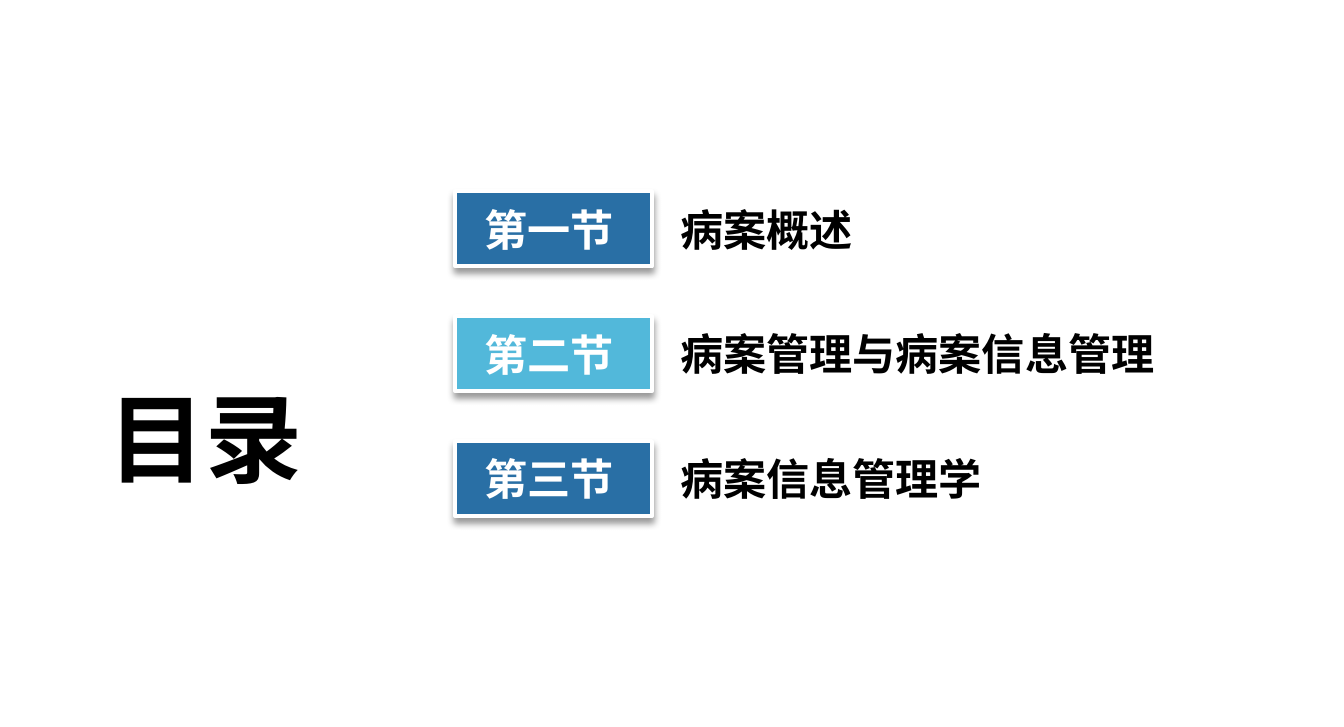
import lxml.etree
import pptx
import pptx.dml.color
import pptx.enum.shapes
import pptx.enum.text
import pptx.oxml.ns
import pptx.util

PX = 914400 // 200  # 200 px to the inch
FONT = "Noto Sans CJK SC"
COLORS = {
    "blue": "296FA5",
    "sky": "52B8DA",
    "white": "FFFFFF",
    "black": "000000",
}
SECTIONS = [
    ("第一节 ", "病案概述", "blue", 660),
    ("第二节 ", "病案管理与病案信息管理", "sky", 848),
    ("第三节 ", "病案信息管理学", "blue", 660),
]
FIRST_TOP, ROW_STEP = 296, 193


def rgb(name):
    return pptx.dml.color.RGBColor.from_string(COLORS[name])


def box(*lengths):
    return [pptx.util.Emu(n * PX) for n in lengths]


def sub(parent, tag, **attrs):
    return lxml.etree.SubElement(parent, pptx.oxml.ns.qn(tag), **attrs)


def set_text(tf, text, size, color):
    p = tf.paragraphs[0]
    p.text = text
    p.font.name = FONT
    p.font.size = pptx.util.Pt(size)
    p.font.bold = True
    p.font.color.rgb = rgb(color)
    # East Asian typeface
    sub(p.font._element, "a:ea", typeface=FONT)
    return p


def add_label(s, x, y, w, h, text, size, wrap=True):
    tf = s.shapes.add_textbox(*box(x, y, w, h)).text_frame
    tf.word_wrap = wrap
    tf.auto_size = pptx.enum.text.MSO_AUTO_SIZE.SHAPE_TO_FIT_TEXT
    set_text(tf, text, size, "black")


def add_shadow(sp):
    sp.shadow.inherit = False
    effects = sp._element.spPr.find(pptx.oxml.ns.qn("a:effectLst"))
    shadow = sub(effects, "a:outerShdw", blurRad=str(pptx.util.Pt(4)),
                 dist=str(pptx.util.Pt(3)), dir="5400000", rotWithShape="0")
    color = sub(shadow, "a:srgbClr", val=COLORS["black"])
    sub(color, "a:alpha", val="40000")


def add_badge(s, x, y, w, h, text, fill):
    sp = s.shapes.add_shape(pptx.enum.shapes.MSO_SHAPE.RECTANGLE, *box(x, y, w, h))
    sp.fill.solid()
    sp.fill.fore_color.rgb = rgb(fill)
    sp.line.color.rgb = rgb("white")
    sp.line.width = pptx.util.Pt(2.25)
    add_shadow(sp)
    sp.text_frame.vertical_anchor = pptx.enum.text.MSO_ANCHOR.MIDDLE
    p = set_text(sp.text_frame, text, 24, "white")
    p.alignment = pptx.enum.text.PP_ALIGN.CENTER


def main():
    prs = pptx.Presentation()
    prs.slide_width, prs.slide_height = box(2078, 1124)
    s = prs.slides.add_slide(prs.slide_layouts[6])

    # Heading
    add_label(s, 148, 576, 358, 202, "目录", 54, wrap=False)

    # Section rows
    for i, (number, title, fill, width) in enumerate(SECTIONS):
        top = FIRST_TOP + i * ROW_STEP
        add_badge(s, 704, top, 304, 116, number, fill)
        add_label(s, 1032, top + 8, width, 100, title, 24)

    prs.save("out.pptx")


if __name__ == "__main__":
    main()
